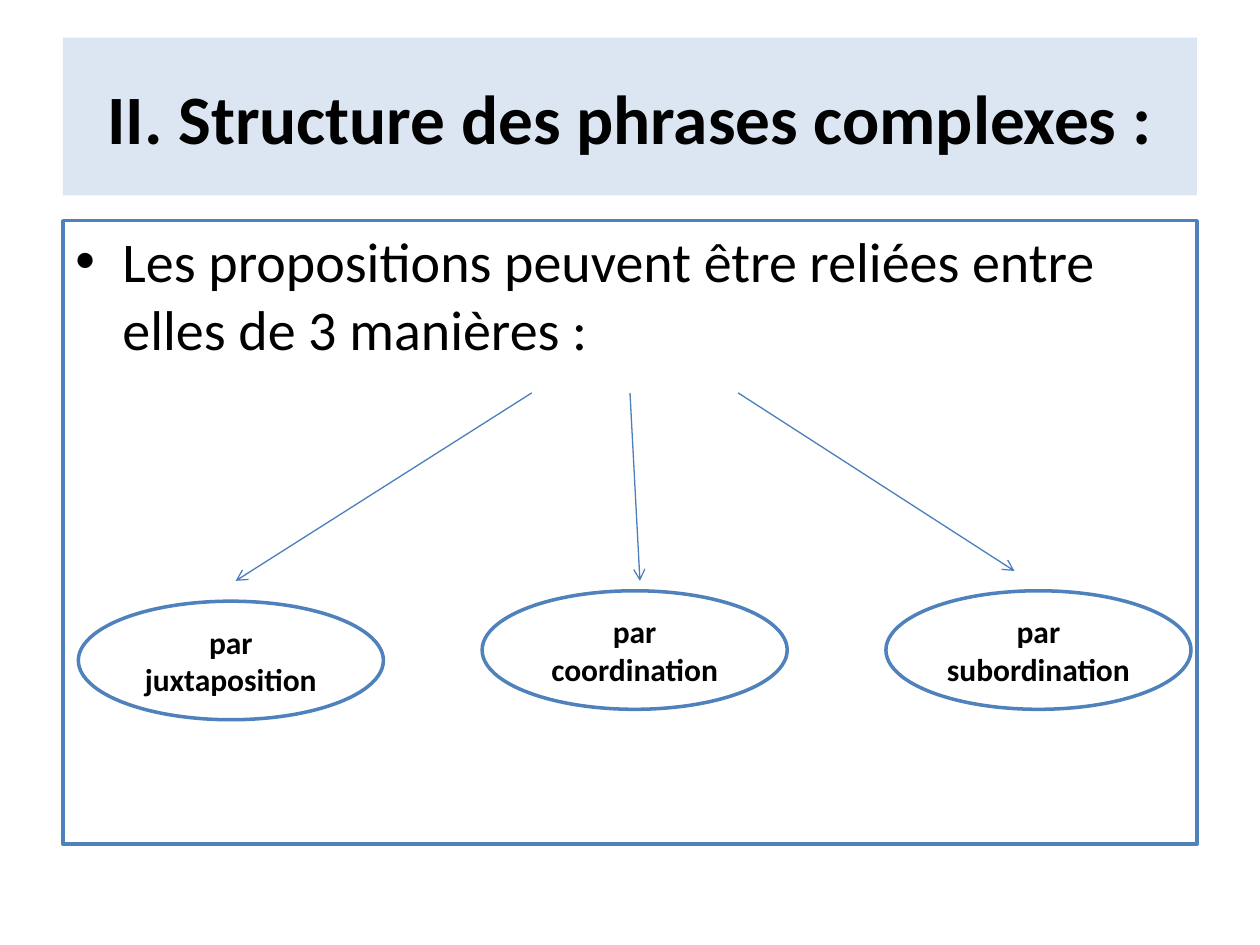
from lxml import etree
from pptx import Presentation
from pptx.dml.color import RGBColor
from pptx.enum.shapes import MSO_CONNECTOR, MSO_SHAPE
from pptx.enum.text import MSO_ANCHOR, PP_ALIGN
from pptx.oxml.ns import qn
from pptx.util import Cm, Pt

RECT, OVAL = MSO_SHAPE.RECTANGLE, MSO_SHAPE.OVAL
LINE = MSO_CONNECTOR.STRAIGHT
TOP, MID = MSO_ANCHOR.TOP, MSO_ANCHOR.MIDDLE
LEFT, CENTER = PP_ALIGN.LEFT, PP_ALIGN.CENTER
WHITE, PALE, BLUE, EDGE = "FFFFFF", "DCE6F2", "4F81BD", "4B7EBC"


def color(code):
    return RGBColor.from_string(code)


def add_box(kind, place, text, fill, line, anchor, align, font):
    """Add a filled shape with one paragraph and return the paragraph."""
    shape = slide.shapes.add_shape(kind, *map(Cm, place))
    shape.shadow.inherit = False
    shape.fill.solid()
    shape.fill.fore_color.rgb = color(fill)
    if line:
        shape.line.color.rgb = color(line)
        shape.line.width = Pt(2)
    else:
        shape.line.fill.background()
    frame = shape.text_frame
    frame.word_wrap = True
    frame.vertical_anchor = anchor
    para = frame.paragraphs[0]
    para.text = text
    para.alignment = align
    para.font.color.rgb = color("000000")
    for name, value in font.items():
        setattr(para.font, name, value)
    return para


prs = Presentation()
prs.slide_width, prs.slide_height = Cm(25.4), Cm(19.05)
slide = prs.slides.add_slide(prs.slide_layouts[6])

# Title and framed body
head = {"name": "Calibri", "size": Pt(39.6), "bold": True}
add_box(RECT, (1.27, 0.76, 22.86, 3.18), "II. Structure des phrases complexes :",
        PALE, None, MID, CENTER, head)

plain = {"name": "Calibri", "size": Pt(32), "bold": False}
body = add_box(RECT, (1.27, 4.45, 22.86, 12.57),
               "Les propositions peuvent être reliées entre elles de 3 manières :",
               WHITE, BLUE, TOP, LEFT, plain)
body.space_before = Pt(3)
props = body._p.get_or_add_pPr()
props.set("marL", str(Cm(0.95)))
props.set("indent", str(Cm(-0.95)))
etree.SubElement(props, qn("a:buFont"), typeface="Arial")
etree.SubElement(props, qn("a:buChar"), char="•")
# The schema wants the bullet ahead of the default run format
for late in props.findall(qn("a:defRPr")):
    props.append(late)

# Arrows: start x, end x, end y
for start, end, low in [(10.72, 4.75, 11.71), (14.88, 20.45, 11.51),
                        (12.7, 12.9, 11.71)]:
    arrow = slide.shapes.add_connector(
        LINE, Cm(start), Cm(7.92), Cm(end), Cm(low))
    arrow.line.color.rgb = color(EDGE)
    arrow.line.width = Pt(0.75)
    etree.SubElement(arrow.line._get_or_add_ln(), qn("a:tailEnd"), type="arrow")
    etree.SubElement(arrow._element.spPr, qn("a:effectLst"))

# The three ways, evenly spaced
label = {"name": "Calibri", "size": Pt(18), "bold": True}
ways = [("par juxtaposition", 12.12), ("par coordination", 11.91),
        ("par subordination", 11.91)]
for i, (text, top) in enumerate(ways):
    add_box(OVAL, (1.58 + i * 8.14, top, 6.15, 2.39), text,
            WHITE, BLUE, MID, CENTER, label)

prs.save("out.pptx")
